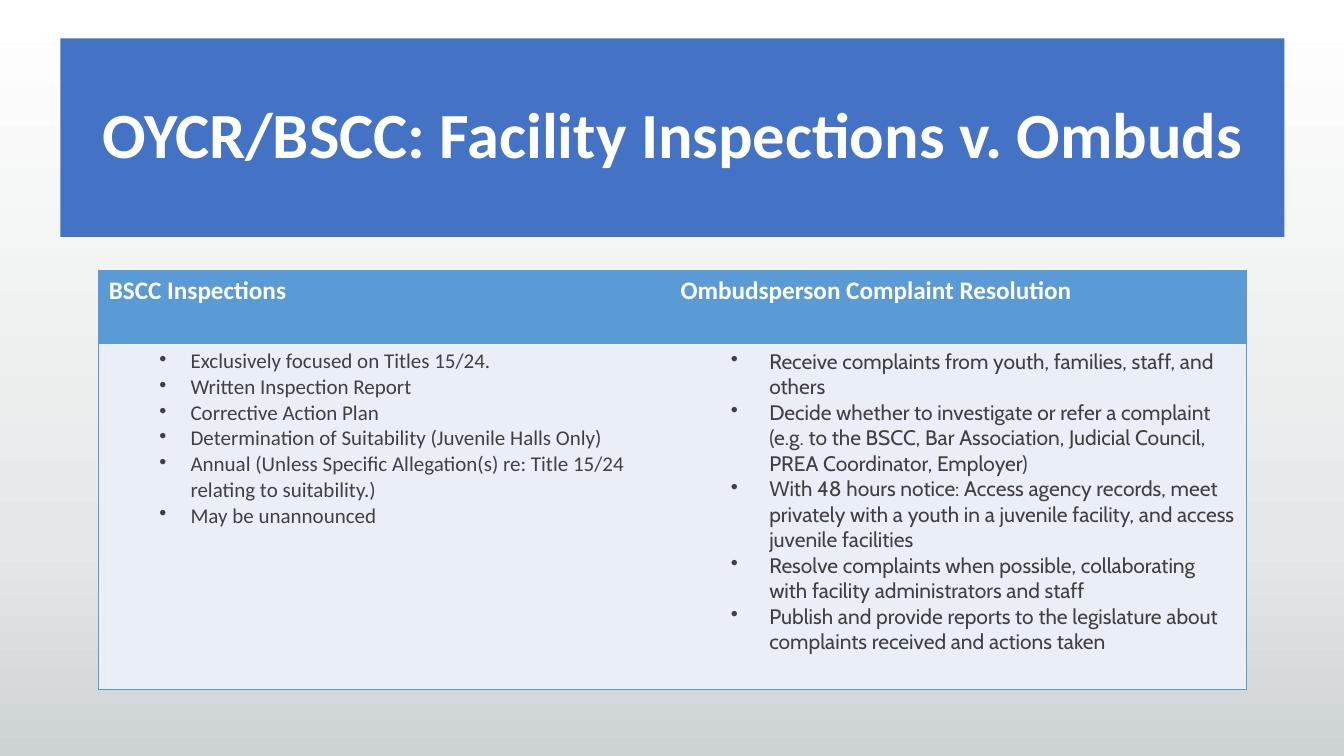
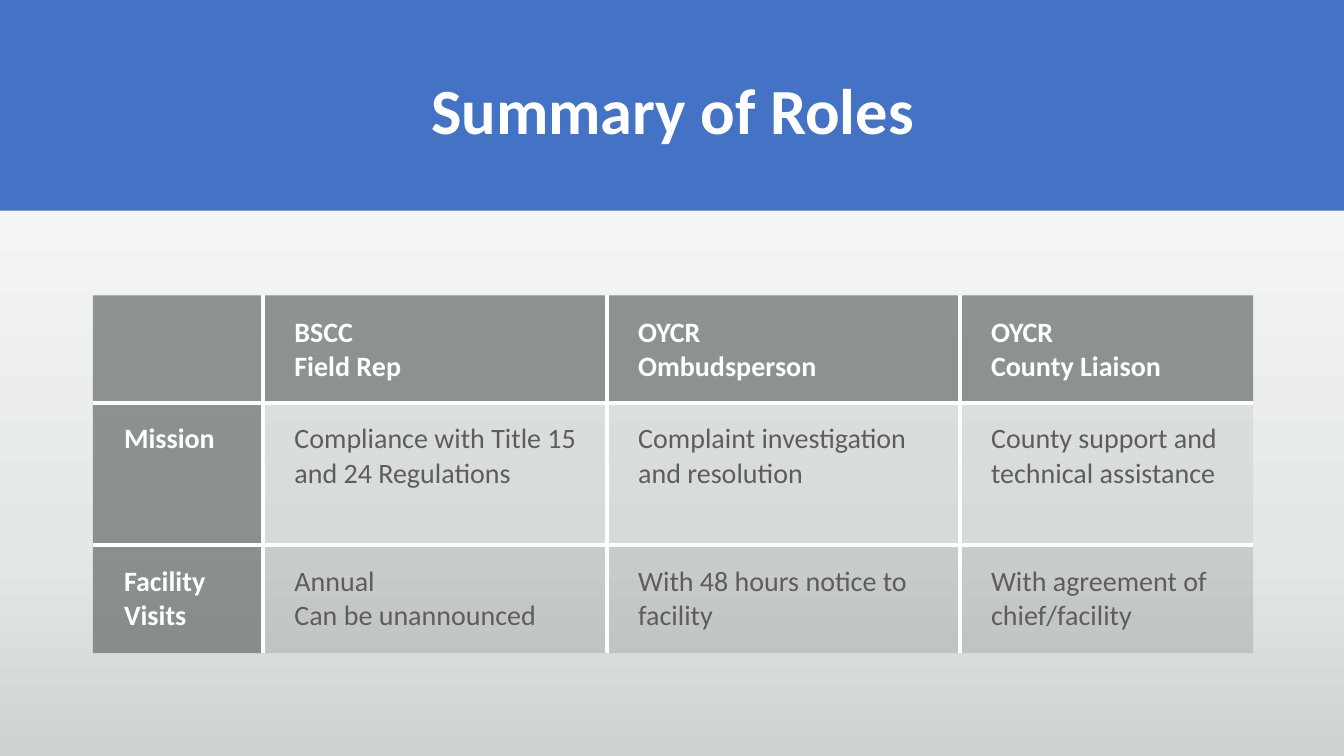
from dataclasses import dataclass

from lxml import etree
from pptx import Presentation
from pptx import util as u
from pptx.dml.color import RGBColor
from pptx.enum import shapes, text
from pptx.oxml.ns import qn

WIDTH, HEIGHT = 13.33, 7.5


@dataclass(frozen=True)
class Theme:
    font: str = "Calibri"
    alternate_font: str = "Cabin"
    band: str = "4472C4"
    white: str = "FFFFFF"
    accent: str = "5B9BD5"
    pale: str = "EAEFF7"
    dark_text: str = "404040"
    gray_text: str = "5D5D5D"
    gray_head: str = "636B68"
    gray_body: str = "878E8B"
    background: tuple = ((0, "FFFFFF"), (72, "E5E8E8"), (100, "CDD2D2"))
    title_size: int = 46
    head_size: int = 18
    list_size: int = 15
    role_size: int = 20


THEME = Theme()

# Content: boxes are left, top, width, height in inches
INSPECTIONS = {
    "title": "OYCR/BSCC: Facility Inspections v. Ombuds",
    "band": (0.6, 0.38, 12.14, 1.97),
    "title_top": 0.64,
    "origin": (0.98, 2.68),
    "columns": (5.67, 5.71),
    "rows": (0.73, 3.43),
    "cells": [
        ["BSCC Inspections", "Ombudsperson Complaint Resolution"],
        [
            ["Exclusively focused on Titles 15/24.",
             "Written Inspection Report",
             "Corrective Action Plan",
             "Determination of Suitability (Juvenile Halls Only)",
             "Annual (Unless Specific Allegation(s) re: Title 15/24 relating to suitability.)",
             "May be unannounced"],
            ["Receive complaints from youth, families, staff, and others",
             "Decide whether to investigate or refer a complaint (e.g. to the BSCC, "
             "Bar Association, Judicial Council, PREA Coordinator, Employer)",
             "With 48 hours notice: Access agency records, meet privately with a youth "
             "in a juvenile facility, and access juvenile facilities",
             "Resolve complaints when possible, collaborating with facility "
             "administrators and staff",
             "Publish and provide reports to the legislature about complaints received "
             "and actions taken"],
        ],
    ],
}
LIST_STYLES = [(THEME.font, 0.81, 0.31), (THEME.alternate_font, 0.88, 0.38)]

ROLES = {
    "title": "Summary of Roles",
    "band": (0, 0, WIDTH, 2.09),
    "title_top": 0.4,
    "origin": (0.92, 2.93),
    "columns": (1.69, 3.41, 3.5, 2.91),
    "rows": (1.07, 1.41, 1.07),
    "cells": [
        ["", "BSCC\nField Rep", "OYCR\nOmbudsperson", "OYCR\nCounty Liaison"],
        ["Mission", "Compliance with Title 15 and 24 Regulations",
         "Complaint investigation and resolution",
         "County support and technical assistance"],
        ["Facility Visits", "Annual\vCan be unannounced",
         "With 48 hours notice to facility", "With agreement of chief/facility"],
    ],
}
ROLE_OPACITY = (None, 15, 30)


def color(value):
    return RGBColor.from_string(value)


def set_background(master):
    fill = master.background.fill
    fill.gradient()
    fill.gradient_angle = 270
    stops = master.element.find(".//" + qn("p:bgPr")).find(".//" + qn("a:gsLst"))
    for stop in list(stops):
        stops.remove(stop)
    for position, value in THEME.background:
        stop = etree.SubElement(stops, qn("a:gs"), pos=str(position * 1000))
        etree.SubElement(stop, qn("a:srgbClr"), val=value)


def style_text(paragraph, size, value, bold=False, font=THEME.font):
    for run in paragraph.runs:
        run.font.name = font
        run.font.size = u.Pt(size)
        run.font.bold = bold
        run.font.color.rgb = color(value)


def add_bullet(paragraph, left, hanging):
    properties = paragraph._p.get_or_add_pPr()
    properties.set("marL", str(u.Inches(left)))
    properties.set("indent", str(-u.Inches(hanging)))
    etree.SubElement(properties, qn("a:buChar"), char="•")


def fill_cell(cell, value, opacity=100):
    cell.fill.solid()
    cell.fill.fore_color.rgb = color(value)
    if opacity < 100:
        fill_color = cell._tc.tcPr.find(".//" + qn("a:srgbClr"))
        etree.SubElement(fill_color, qn("a:alpha"), val=str(opacity * 1000))


def set_borders(cell, visible, value, points):
    """Draw the edges flagged in visible: left, right, top, bottom."""
    for index, (edge, shown) in enumerate(zip("LRTB", visible)):
        line = etree.Element(qn("a:ln" + edge), w=str(u.Pt(points)))
        if shown:
            solid = etree.SubElement(line, qn("a:solidFill"))
            etree.SubElement(solid, qn("a:srgbClr"), val=value)
        else:
            etree.SubElement(line, qn("a:noFill"))
        cell._tc.get_or_add_tcPr().insert(index, line)


def outer_edges(row, column, rows, columns):
    return column == 0, column == columns - 1, row == 0, row == rows - 1


def start_slide(presentation, content):
    """Add a slide with its title band and an unstyled table."""
    slide = presentation.slides.add_slide(presentation.slide_layouts[6])

    # Title band
    band = slide.shapes.add_shape(
        shapes.MSO_SHAPE.RECTANGLE, *map(u.Inches, content["band"]))
    band.shadow.inherit = False
    band.fill.solid()
    band.fill.fore_color.rgb = color(THEME.band)
    band.line.fill.background()

    # Title
    title_box = (0.92, content["title_top"], 11.5, 1.45)
    frame = slide.shapes.add_textbox(*map(u.Inches, title_box)).text_frame
    frame.word_wrap = True
    frame.vertical_anchor = text.MSO_ANCHOR.MIDDLE
    frame.text = content["title"]
    paragraph = frame.paragraphs[0]
    paragraph.alignment = text.PP_ALIGN.CENTER
    paragraph.line_spacing = 0.9
    style_text(paragraph, THEME.title_size, THEME.white, bold=True)

    # Table grid
    columns, rows = content["columns"], content["rows"]
    box = (*content["origin"], sum(columns), sum(rows))
    table = slide.shapes.add_table(
        len(rows), len(columns), *map(u.Inches, box)).table
    table.first_row = table.horz_banding = False
    for column, width in zip(table.columns, columns):
        column.width = u.Inches(width)
    for row, height in zip(table.rows, rows):
        row.height = u.Inches(height)
    return table


def each_cell(table, content):
    for row, values in enumerate(content["cells"]):
        for column, value in enumerate(values):
            yield row, column, table.cell(row, column), value


def build_inspections(presentation):
    table = start_slide(presentation, INSPECTIONS)
    for row, column, cell, value in each_cell(table, INSPECTIONS):
        header = row == 0
        cell.text = value if header else "\n".join(value)
        for paragraph in cell.text_frame.paragraphs:
            if header:
                style_text(paragraph, THEME.head_size, THEME.white, bold=True)
            else:
                font, left, hanging = LIST_STYLES[column]
                add_bullet(paragraph, left, hanging)
                style_text(paragraph, THEME.list_size, THEME.dark_text, font=font)
        fill_cell(cell, THEME.accent if header else THEME.pale)
        set_borders(cell, outer_edges(row, column, 2, 2), THEME.accent, 1)


def build_roles(presentation):
    table = start_slide(presentation, ROLES)
    row_count, column_count = len(ROLES["rows"]), len(ROLES["columns"])
    for row, column, cell, value in each_cell(table, ROLES):
        heading = row == 0 or column == 0
        cell.text = value
        cell.margin_left = u.Inches(0.31)
        cell.margin_right = cell.margin_top = cell.margin_bottom = u.Inches(0.19)
        if row == 0:
            cell.vertical_anchor = text.MSO_ANCHOR.BOTTOM
        for paragraph in cell.text_frame.paragraphs:
            style_text(paragraph, THEME.role_size,
                       THEME.white if heading else THEME.gray_text, bold=heading)
        if heading:
            fill_cell(cell, THEME.gray_head, 70)
        else:
            fill_cell(cell, THEME.gray_body, ROLE_OPACITY[row])
        outer = outer_edges(row, column, row_count, column_count)
        set_borders(cell, [not edge for edge in outer], THEME.white, 3)


def main():
    presentation = Presentation()
    presentation.slide_width = u.Inches(WIDTH)
    presentation.slide_height = u.Inches(HEIGHT)
    set_background(presentation.slide_master)
    build_inspections(presentation)
    build_roles(presentation)
    presentation.save("out.pptx")


if __name__ == "__main__":
    main()
